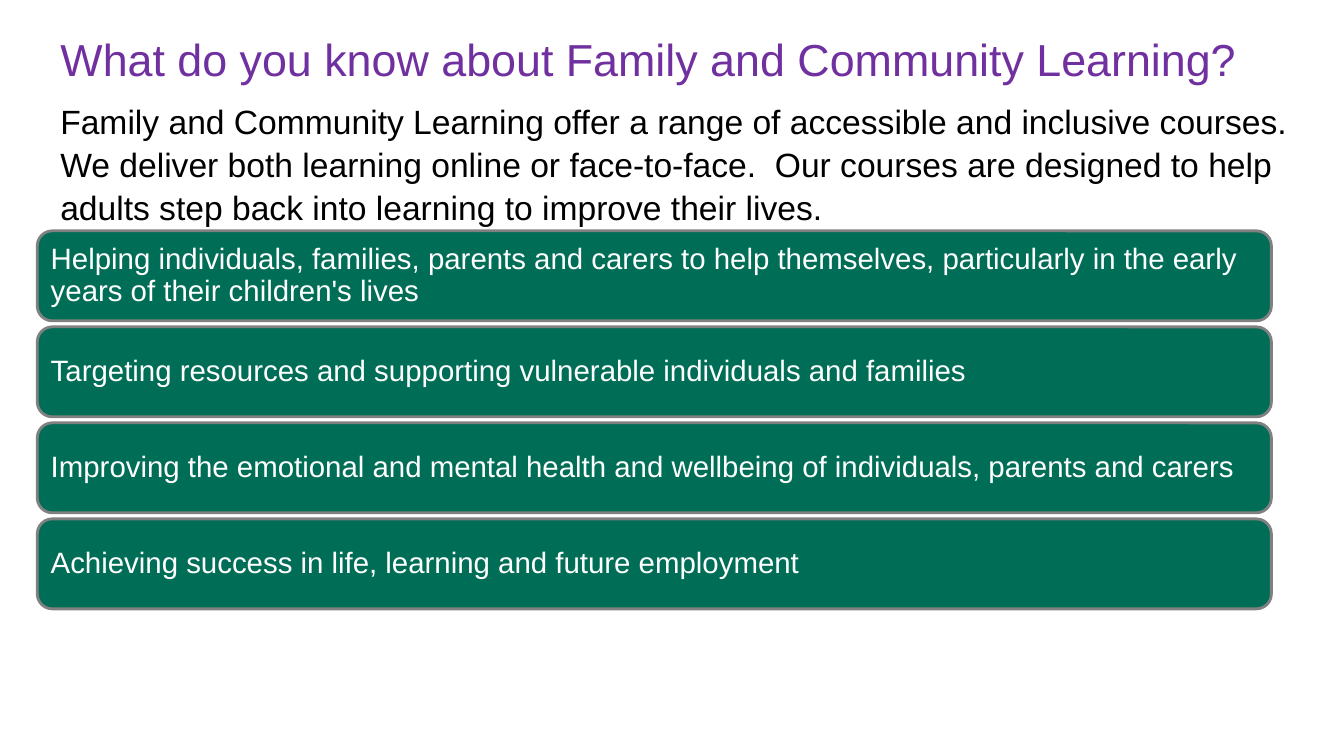
from dataclasses import dataclass

from pptx import Presentation
from pptx.dml.color import RGBColor as RGB
from pptx.enum.shapes import MSO_SHAPE as Shape
from pptx.enum.text import MSO_ANCHOR as Anchor, MSO_AUTO_SIZE as Auto, PP_ALIGN as Align
from pptx.util import Inches, Pt


@dataclass(frozen=True)
class Theme:
    font: str = "Arial"
    purple: RGB = RGB(0x70, 0x30, 0xA0)
    black: RGB = RGB(0, 0, 0)
    white: RGB = RGB(255, 255, 255)
    green: RGB = RGB(0x00, 0x6E, 0x56)
    grey: RGB = RGB(0x80, 0x80, 0x80)
    head: int = 32
    body: int = 24
    label: int = 21


THEME = Theme()

TITLE = "What do you know about Family and Community Learning?"
INTRO = (
    "Family and Community Learning offer a range of accessible and inclusive courses. "
    "We deliver both learning online or face-to-face.  Our courses are designed to help "
    "adults step back into learning to improve their lives."
)
AIMS = [
    "Helping individuals, families, parents and carers to help themselves, "
    "particularly in the early years of their children's lives",
    "Targeting resources and supporting vulnerable individuals and families",
    "Improving the emotional and mental health and wellbeing of individuals, parents and carers",
    "Achieving success in life, learning and future employment",
]


def write(frame, text, size, color, spacing=1.0):
    frame.word_wrap = True
    para = frame.paragraphs[0]
    para.text = text
    para.alignment = Align.LEFT
    para.line_spacing = spacing
    para.font.name = THEME.font
    para.font.size = Pt(size)
    para.font.color.rgb = color


def add_title(slide, left, top, width, height):
    title = slide.shapes.title
    title.left, title.top = Inches(left), Inches(top)
    title.width, title.height = Inches(width), Inches(height)
    frame = title.text_frame
    frame.vertical_anchor = Anchor.MIDDLE
    frame.auto_size = Auto.NONE
    write(frame, TITLE, THEME.head, THEME.purple)


def add_intro(slide, left, top, width, height):
    box = slide.shapes.add_textbox(Inches(left), Inches(top), Inches(width), Inches(height))
    write(box.text_frame, INTRO, THEME.body, THEME.black, 1.07)


def add_aims(slide, left, top, width, height, gap=0.06):
    # Equal bars fill the height, with the same gap between them
    tall = (height - gap * (len(AIMS) - 1)) / len(AIMS)
    for row, aim in enumerate(AIMS):
        bar = slide.shapes.add_shape(
            Shape.ROUNDED_RECTANGLE,
            Inches(left), Inches(top + row * (tall + gap)), Inches(width), Inches(tall),
        )
        bar.shadow.inherit = False
        bar.fill.solid()
        bar.fill.fore_color.rgb = THEME.green
        bar.line.color.rgb = THEME.grey
        bar.line.width = Pt(2)
        frame = bar.text_frame
        frame.vertical_anchor = Anchor.MIDDLE
        frame.margin_left = frame.margin_right = Inches(0.09)
        frame.margin_top = frame.margin_bottom = Inches(0.09)
        write(frame, aim, THEME.label, THEME.white, 0.9)


def main():
    deck = Presentation()
    deck.slide_width, deck.slide_height = Inches(13.33), Inches(7.5)
    slide = deck.slides.add_slide(deck.slide_layouts.get_by_name("Title Only"))

    # Heading and introduction
    add_title(slide, 0.5, 0.07, 11.98, 1.02)
    add_intro(slide, 0.5, 0.92, 12.83, 1.7)

    # Aims of the service
    add_aims(slide, 0.37, 2.29, 12.24, 3.75)

    deck.save("out.pptx")


if __name__ == "__main__":
    main()
